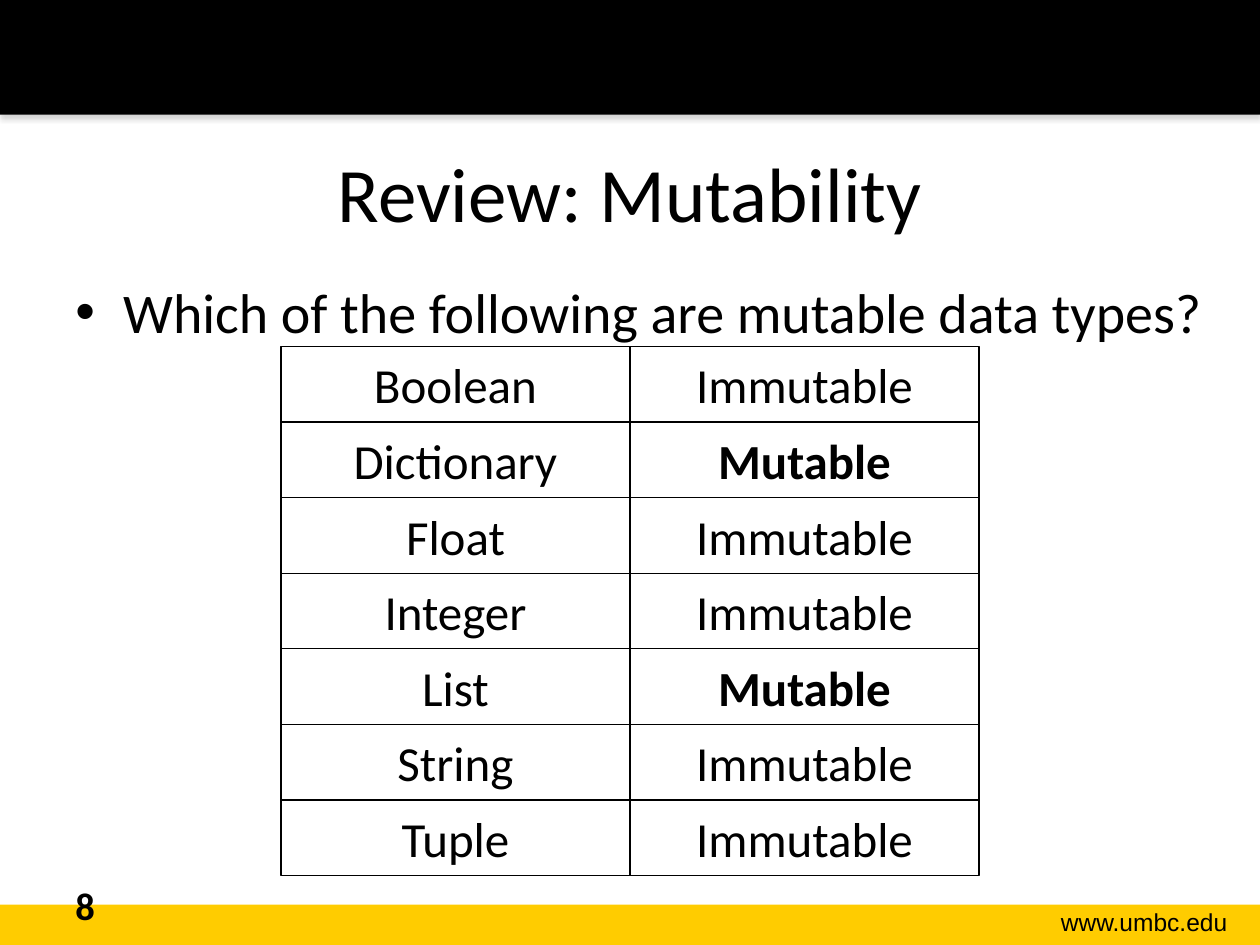
from dataclasses import dataclass

from lxml.etree import SubElement
from pptx import Presentation
from pptx.dml.color import RGBColor
from pptx.enum.shapes import MSO_SHAPE
from pptx.enum.text import MSO_ANCHOR, PP_ALIGN
from pptx.oxml import parse_xml
from pptx.oxml.ns import nsdecls, qn
from pptx.util import Inches, Pt

BLACK, GOLD, WHITE = "000000", "FFCC00", "FFFFFF"


@dataclass
class Area:
    left: float
    top: float
    width: float
    height: float

    def lengths(self) -> tuple:
        return tuple(Inches(v) for v in (self.left, self.top, self.width, self.height))


@dataclass
class DataType:
    name: str
    mutable: bool


DATA_TYPES = [
    DataType("Boolean", False),
    DataType("Dictionary", True),
    DataType("Float", False),
    DataType("Integer", False),
    DataType("List", True),
    DataType("String", False),
    DataType("Tuple", False),
]


def color(value: str) -> RGBColor:
    return RGBColor.from_string(value)


def style(para, size: float, align=PP_ALIGN.LEFT, bold=False, name="Calibri") -> None:
    para.alignment = align
    font = para.font
    font.name, font.size, font.bold = name, Pt(size), bold
    font.color.rgb = color(BLACK)


def add_rectangle(page, area: Area, fill: str):
    rectangle = page.shapes.add_shape(MSO_SHAPE.RECTANGLE, *area.lengths())
    rectangle.shadow.inherit = False
    rectangle.fill.solid()
    rectangle.fill.fore_color.rgb = color(fill)
    rectangle.line.fill.background()
    return rectangle


def add_shadow(shape) -> None:
    effects = shape._element.spPr.find(qn("a:effectLst"))
    effects.append(parse_xml(
        f'<a:outerShdw {nsdecls("a")} blurRad="{Pt(3.1)}" dist="{Pt(1.8)}" '
        'dir="5400000" rotWithShape="0"><a:srgbClr val="808080">'
        '<a:alpha val="35000"/></a:srgbClr></a:outerShdw>'))


def add_text(page, area: Area, text: str):
    box = page.shapes.add_textbox(*area.lengths())
    box.text_frame.word_wrap = True
    box.text_frame.text = text
    return box.text_frame


def add_bullet(para, indent: float) -> None:
    properties = para._p.get_or_add_pPr()
    properties.set("marL", str(Inches(indent)))
    properties.set("indent", str(-Inches(indent)))
    SubElement(properties, qn("a:buFont")).set("typeface", "Arial")
    SubElement(properties, qn("a:buChar")).set("char", "•")


def add_card(page, area: Area, text: str, bold: bool) -> None:
    card = add_rectangle(page, area, WHITE)
    card.line.color.rgb = color(BLACK)
    card.line.width = Pt(0.75)
    card.text_frame.text = text
    card.text_frame.vertical_anchor = MSO_ANCHOR.MIDDLE
    style(card.text_frame.paragraphs[0], 28, PP_ALIGN.CENTER, bold)


def add_type_cards(page, first: Area, types: list[DataType]) -> None:
    for row, data_type in enumerate(types):
        answer = "Mutable" if data_type.mutable else "Immutable"
        labels = [(data_type.name, False), (answer, data_type.mutable)]
        for column, (text, bold) in enumerate(labels):
            area = Area(first.left + column * first.width,
                        first.top + row * first.height, first.width, first.height)
            add_card(page, area, text, bold)


def main() -> None:
    deck = Presentation()
    deck.slide_width, deck.slide_height = Inches(10), Inches(7.5)
    page = deck.slides.add_slide(deck.slide_layouts[5])

    # Header and footer bands
    add_rectangle(page, Area(0, 7.18, 10, 0.32), GOLD)
    add_shadow(add_rectangle(page, Area(0, 0, 10, 0.91), BLACK))
    address = add_text(page, Area(7.85, 7.15, 1.99, 0.34), "www.umbc.edu")
    style(address.paragraphs[0], 14, PP_ALIGN.RIGHT, name="Arial")

    # Title
    title = page.shapes.title
    title.left, title.top, title.width, title.height = Area(0.5, 0.9, 9, 1.25).lengths()
    title.text_frame.text = "Review: Mutability"
    title.text_frame.vertical_anchor = MSO_ANCHOR.MIDDLE
    style(title.text_frame.paragraphs[0], 44, PP_ALIGN.CENTER)

    # Question
    question = add_text(page, Area(0.5, 2.15, 9.3, 4.55),
                        "Which of the following are mutable data types?")
    add_bullet(question.paragraphs[0], 0.38)
    style(question.paragraphs[0], 32)

    # Page number
    number = add_text(page, Area(0.5, 6.95, 2.33, 0.4), "8")
    style(number.paragraphs[0], 22, bold=True)

    # Separate cards: type names on the left, answers on the right
    add_type_cards(page, Area(2.23, 2.75, 2.77, 0.6), DATA_TYPES)

    deck.save("out.pptx")


if __name__ == "__main__":
    main()
